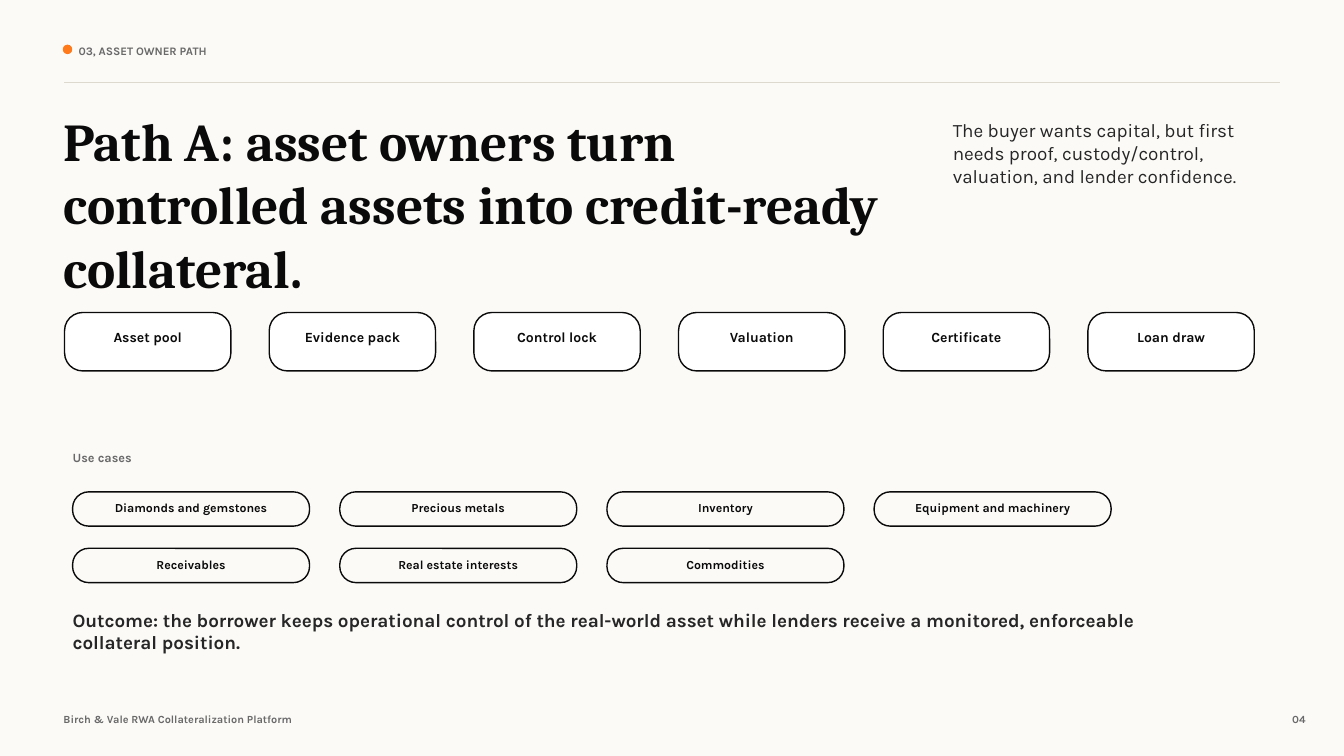
from dataclasses import dataclass

from lxml.etree import SubElement
from pptx import Presentation
from pptx.dml.color import RGBColor as RGB
from pptx.enum.shapes import MSO_CONNECTOR as CONN, MSO_SHAPE as SHAPE
from pptx.enum.text import MSO_ANCHOR as ANCHOR, MSO_AUTO_SIZE as AUTOSIZE, PP_ALIGN as ALIGN
from pptx.oxml.ns import qn
from pptx.util import Emu, Pt

PX = 9144


def px(*lengths):
    return [Emu(n * PX) for n in lengths]


@dataclass(frozen=True)
class Theme:
    serif: str = "Cambria"
    sans: str = "Karla"
    paper: str = "FBFAF7"
    white: str = "FFFFFF"
    ink: str = "0A0A0A"
    body: str = "262626"
    muted: str = "696969"
    rule: str = "DED9CF"
    accent: str = "FF7A1A"
    title_size: float = 38
    body_size: float = 13.5
    step_size: float = 10
    label_size: float = 9
    case_size: float = 8.8
    section_size: float = 8.2
    footer_size: float = 7.8


class Deck:
    def __init__(self, theme):
        self.theme = theme
        self.prs = Presentation()
        self.prs.slide_width, self.prs.slide_height = px(1333, 750)
        self.s = self.prs.slides.add_slide(self.prs.slide_layouts[5])
        fill = self.s.background.fill
        fill.solid()
        fill.fore_color.rgb = RGB.from_string(theme.paper)

    def set_text(self, sp, text, size, color, bold=True, font=None,
                 align=ALIGN.LEFT, anchor=ANCHOR.MIDDLE, bottom=0):
        tf = sp.text_frame
        tf.text = text
        tf.word_wrap = True
        tf.auto_size = AUTOSIZE.NONE
        tf.vertical_anchor = anchor
        tf.margin_left, tf.margin_top, tf.margin_right, tf.margin_bottom = px(0, 0, 0, bottom)
        p = tf.paragraphs[0]
        p.alignment = align
        for r in p.runs:
            r.font.name = font or self.theme.sans
            r.font.size = Pt(size)
            r.font.bold = bold
            r.font.color.rgb = RGB.from_string(color)

    def title(self, box, text):
        sp = self.s.shapes.title
        sp.left, sp.top, sp.width, sp.height = px(*box)
        t = self.theme
        self.set_text(sp, text, t.title_size, t.ink, font=t.serif, anchor=ANCHOR.TOP)

    def text(self, box, text, size, color, **style):
        self.set_text(self.s.shapes.add_textbox(*px(*box)), text, size, color, **style)

    def shape(self, kind, box, fill, line):
        sp = self.s.shapes.add_shape(kind, *px(*box))
        sp.shadow.inherit = False
        sp.fill.solid()
        sp.fill.fore_color.rgb = RGB.from_string(fill)
        sp.line.color.rgb = RGB.from_string(line)
        sp.line.width = Pt(1)
        return sp

    def pill(self, box, text, size, fill, radius, bottom):
        sp = self.shape(SHAPE.ROUNDED_RECTANGLE, box, fill, self.theme.ink)
        sp.adjustments[0] = radius / box[3]
        self.set_text(sp, text, size, self.theme.ink, align=ALIGN.CENTER, bottom=bottom)

    def rule(self, x1, x2, y):
        line = self.s.shapes.add_connector(CONN.STRAIGHT, *px(x1, y, x2, y))
        line.line.color.rgb = RGB.from_string(self.theme.rule)
        line.line.width = Pt(1)
        SubElement(line._element.spPr, qn("a:effectLst"))


def main():
    t = Theme()
    deck = Deck(t)

    deck.shape(SHAPE.OVAL, (63, 45, 8, 8), t.accent, t.accent)
    deck.text((78, 42, 720, 18), "03, ASSET OWNER PATH", t.section_size, t.muted)
    deck.rule(63, 1270, 82)

    deck.title((63, 107, 860, 136),
               "Path A: asset owners turn controlled assets into credit-ready collateral.")
    deck.text((945, 118, 285, 85),
              "The buyer wants capital, but first needs proof, custody/control, "
              "valuation, and lender confidence.",
              t.body_size, t.body, bold=False, anchor=ANCHOR.TOP)

    steps = ["Asset pool", "Evidence pack", "Control lock", "Valuation", "Certificate", "Loan draw"]
    for i, step in enumerate(steps):
        deck.pill((64 + 203 * i, 310, 165, 58), step, t.step_size, t.white, 18, 10)

    deck.text((72, 445, 130, 18), "Use cases", t.label_size, t.muted)
    cases = ["Diamonds and gemstones", "Precious metals", "Inventory", "Equipment and machinery",
             "Receivables", "Real estate interests", "Commodities"]
    for i, case in enumerate(cases):
        row, col = divmod(i, 4)
        deck.pill((72 + 265 * col, 488 + 56 * row, 235, 34), case, t.case_size, t.paper, 16, 2)

    deck.text((72, 608, 1070, 36),
              "Outcome: the borrower keeps operational control of the real-world asset "
              "while lenders receive a monitored, enforceable collateral position.",
              t.body_size, t.body)

    deck.text((63, 704, 500, 18), "Birch & Vale RWA Collateralization Platform",
              t.footer_size, t.muted)
    deck.text((1225, 704, 70, 18), "04", t.footer_size, t.muted, align=ALIGN.RIGHT)

    deck.prs.save("out.pptx")


if __name__ == "__main__":
    main()
